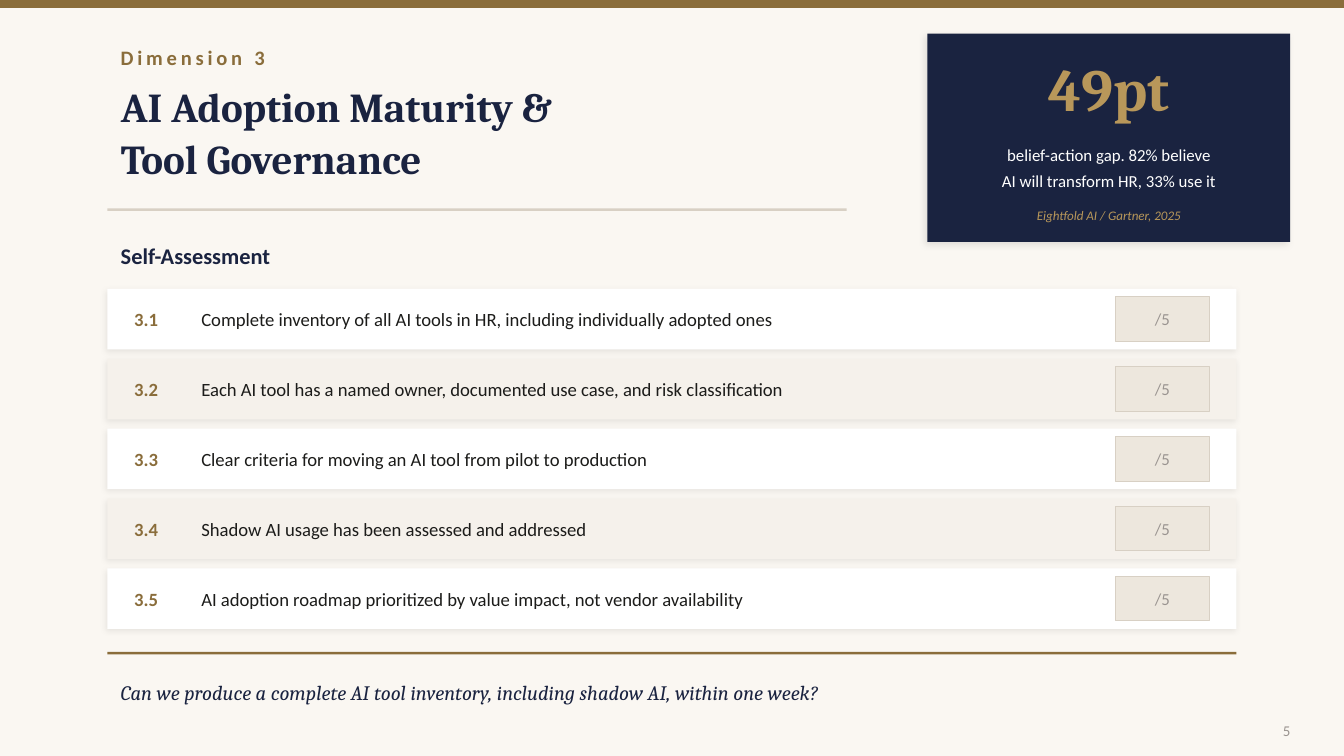
from lxml.etree import SubElement
from pptx import Presentation
from pptx.dml.color import RGBColor
from pptx.enum.shapes import MSO_SHAPE as Shape
from pptx.enum.text import MSO_ANCHOR as Anchor, MSO_AUTO_SIZE as AutoSize, PP_ALIGN as Align
from pptx.oxml.ns import qn
from pptx.util import Inches, Pt

COLORS = {
    "cream": "FAF7F2", "bronze": "8A6D3B", "gold": "B8975A", "navy": "1A2340",
    "ink": "1C1C1A", "white": "FFFFFF", "sand": "F5F1EB", "score": "EDE7DD",
    "rule": "D8D0C4", "gray": "9A9490", "shadow": "000000",
}
RGB = {name: RGBColor.from_string(value) for name, value in COLORS.items()}

QUESTIONS = [
    "Complete inventory of all AI tools in HR, including individually adopted ones",
    "Each AI tool has a named owner, documented use case, and risk classification",
    "Clear criteria for moving an AI tool from pilot to production",
    "Shadow AI usage has been assessed and addressed",
    "AI adoption roadmap prioritized by value impact, not vendor availability",
]

prs = Presentation()
prs.slide_width = Inches(10)
prs.slide_height = prs.slide_width * 9 // 16
slide = prs.slides.add_slide(prs.slide_layouts[5])
slide.background.fill.solid()
slide.background.fill.fore_color.rgb = RGB["cream"]


def add_box(left, top, width, height, fill, shadow=None):
    """Add a borderless rectangle; shadow is (opacity %, blur pt, distance pt)."""
    box = slide.shapes.add_shape(
        Shape.RECTANGLE, Inches(left), Inches(top), Inches(width), Inches(height))
    box.fill.solid()
    box.fill.fore_color.rgb = RGB[fill]
    box.line.fill.background()
    box.shadow.inherit = False
    if shadow:
        opacity, blur, distance = shadow
        effects = box._element.spPr.find(qn("a:effectLst"))
        outer = SubElement(effects, qn("a:outerShdw"), blurRad=str(Pt(blur)),
                           dist=str(Pt(distance)), dir=str(135 * 60000),
                           algn="bl", rotWithShape="0")
        color = SubElement(outer, qn("a:srgbClr"), val=COLORS["shadow"])
        SubElement(color, qn("a:alpha"), val=str(opacity * 1000))
    return box


def write(text, size, color, place=None, target=None, font="Calibri", bold=False,
          italic=False, align=Align.LEFT, anchor=Anchor.MIDDLE, spacing=None):
    """Write lines into target, or into a new text box at place."""
    if target is None:
        target = slide.shapes.add_textbox(*map(Inches, place))
    frame = target.text_frame
    frame.text = text
    frame.word_wrap = True
    frame.auto_size = AutoSize.NONE
    frame.vertical_anchor = anchor
    for paragraph in frame.paragraphs:
        paragraph.alignment = align
        if spacing:
            paragraph.line_spacing = spacing
        paragraph.font.name = font
        paragraph.font.size = Pt(size)
        paragraph.font.bold = bold
        paragraph.font.italic = italic
        paragraph.font.color.rgb = RGB[color]
    return target


# Header
add_box(0, 0, 10, 0.06, "bronze")
dimension = write("Dimension 3", 11, "bronze", (0.8, 0.25, 4, 0.35), bold=True)
dimension.text_frame.paragraphs[0].runs[0].font._element.set("spc", "200")
title = slide.shapes.title
title.left, title.top, title.width, title.height = map(Inches, (0.8, 0.55, 5.5, 0.85))
write("AI Adoption Maturity &\nTool Governance", 22, "navy", target=title,
      font="Cambria", bold=True, spacing=1.05)
add_box(0.8, 1.55, 5.5, 0.02, "rule")

# Key figure
add_box(6.9, 0.25, 2.7, 1.55, "navy", shadow=(10, 4, 2))
write("49pt", 32, "gold", (6.9, 0.3, 2.7, 0.7), font="Cambria", bold=True,
      align=Align.CENTER)
write("belief-action gap. 82% believe\nAI will transform HR, 33% use it", 9, "white",
      (7, 0.95, 2.5, 0.55), align=Align.CENTER, spacing=1.3)
write("Eightfold AI / Gartner, 2025", 7, "gold", (7, 1.5, 2.5, 0.2), italic=True,
      align=Align.CENTER)

# Self-assessment rows
write("Self-Assessment", 12, "navy", (0.8, 1.75, 4, 0.3), bold=True)
for index, question in enumerate(QUESTIONS):
    top = 2.15 + 0.52 * index
    add_box(0.8, top, 8.4, 0.45, ("white", "sand")[index % 2], shadow=(8, 3, 1))
    write(f"3.{index + 1}", 10, "bronze", (0.9, top, 0.45, 0.45), bold=True)
    write(question, 10, "ink", (1.4, top, 6.6, 0.45))
    score = add_box(8.3, top + 0.06, 0.7, 0.33, "score")
    score.line.color.rgb = RGB["rule"]
    score.line.width = Pt(0.5)
    write("/5", 9, "gray", target=score, align=Align.CENTER)

# Closing question and page number
add_box(0.8, 4.85, 8.4, 0.02, "bronze")
write("Can we produce a complete AI tool inventory, including shadow AI, within one week?",
      11, "navy", (0.8, 4.95, 8.4, 0.4), font="Cambria", italic=True)
write("5", 8, "gray", (9.2, 5.25, 0.5, 0.3), align=Align.RIGHT, anchor=Anchor.BOTTOM)

prs.save("out.pptx")
